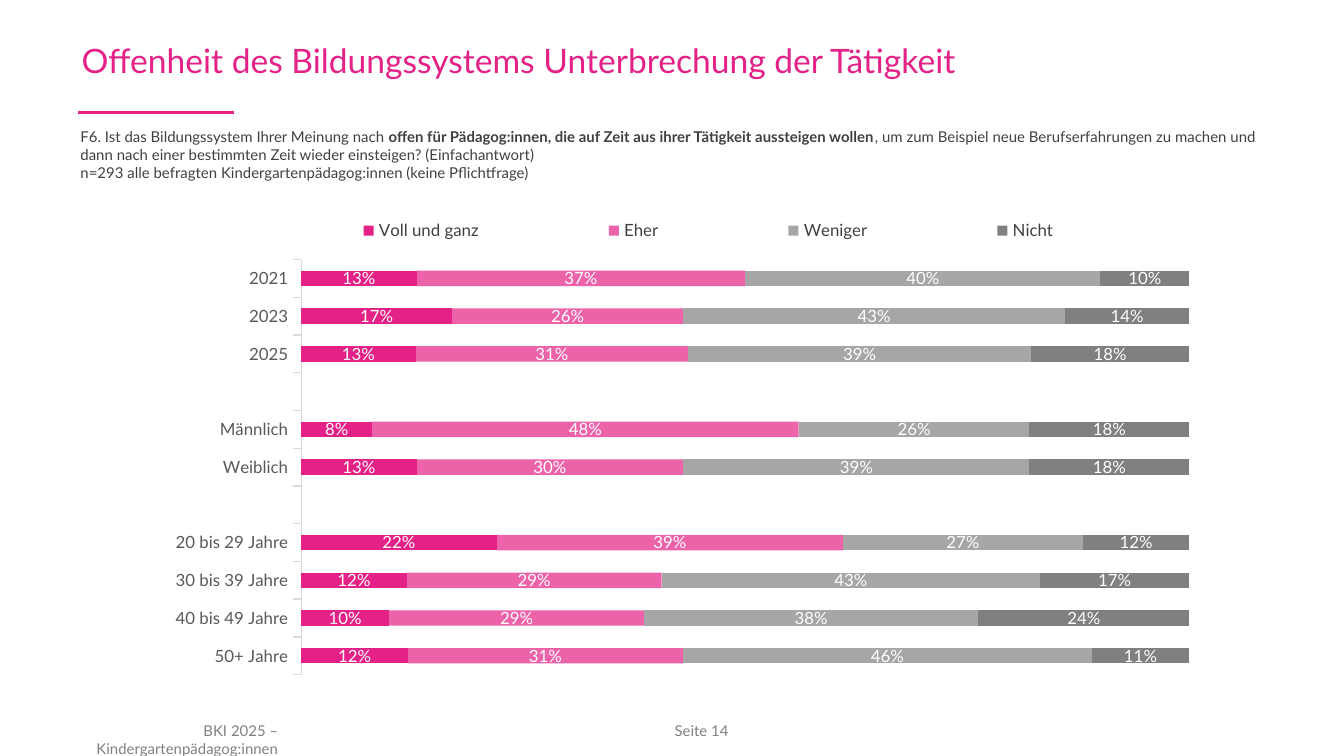
from dataclasses import dataclass
from typing import Optional

from lxml.etree import SubElement
from pptx import Presentation
from pptx.chart.chart import Chart
from pptx.chart.data import CategoryChartData
from pptx.dml.color import RGBColor
from pptx.enum.chart import XL_CHART_TYPE, XL_LEGEND_POSITION, XL_TICK_MARK
from pptx.enum.shapes import MSO_CONNECTOR
from pptx.enum.text import MSO_ANCHOR, PP_ALIGN
from pptx.oxml import parse_xml
from pptx.oxml.ns import nsdecls, qn
from pptx.slide import Slide
from pptx.util import Inches, Pt


@dataclass(frozen=True)
class Theme:
    font: str = "Lato"
    accent: str = "E42187"
    text: str = "404040"
    muted: str = "808080"
    axis_text: str = "595959"
    axis_line: str = "D9D9D9"
    light_gray: str = "A6A6A6"
    white: str = "FFFFFF"
    title_size: float = 18
    small_size: float = 8
    chart_size: float = 9


@dataclass(frozen=True)
class Box:
    left: float
    top: float
    width: float
    height: float

    def lengths(self) -> tuple:
        return tuple(Inches(v) for v in (self.left, self.top, self.width, self.height))


@dataclass(frozen=True)
class Run:
    text: str
    bold: bool = False


@dataclass(frozen=True)
class TextBlock:
    box: Box
    paragraphs: list[list[Run]]
    size: float
    color: str
    alignment: PP_ALIGN = PP_ALIGN.LEFT
    anchor: MSO_ANCHOR = MSO_ANCHOR.TOP


@dataclass(frozen=True)
class Answer:
    name: str
    percents: list[Optional[int]]
    color: str
    opacity: int = 100


THEME = Theme()
CATEGORIES = ["2021", "2023", "2025", "", "Männlich", "Weiblich", "",
              "20 bis 29 Jahre", "30 bis 39 Jahre", "40 bis 49 Jahre", "50+ Jahre"]
ANSWERS = [
    Answer("Voll und ganz", [13, 17, 13, None, 8, 13, None, 22, 12, 10, 12], THEME.accent),
    Answer("Eher", [37, 26, 31, None, 48, 30, None, 39, 29, 29, 31], THEME.accent, 70),
    Answer("Weniger", [40, 43, 39, None, 26, 39, None, 27, 43, 38, 46], THEME.light_gray),
    Answer("Nicht", [10, 14, 18, None, 18, 18, None, 12, 17, 24, 11], THEME.muted),
]
QUESTION = [
    [
        Run("F6. Ist das Bildungssystem Ihrer Meinung nach "),
        Run("offen für Pädagog:innen, die auf Zeit aus ihrer Tätigkeit aussteigen wollen", True),
        Run(", um zum Beispiel neue Berufserfahrungen zu machen und dann nach einer "
            "bestimmten Zeit wieder einsteigen? (Einfachantwort)"),
    ],
    [Run("n=293 alle befragten Kindergartenpädagog:innen (keine Pflichtfrage)")],
]
TEXT_BLOCKS = [
    TextBlock(Box(4.88, 5.32, 0.64, 0.24), [[Run("Seite 14")]],
              THEME.small_size, THEME.muted, PP_ALIGN.RIGHT),
    TextBlock(Box(0.24, 5.32, 1.93, 0.24), [[Run("BKI 2025 – Kindergartenpädagog:innen")]],
              THEME.small_size, THEME.muted, PP_ALIGN.RIGHT),
    TextBlock(Box(0.5, 0.9, 9.15, 0.5), QUESTION, THEME.small_size, THEME.text),
    TextBlock(Box(0.51, 0.1, 7.4, 0.7),
              [[Run("Offenheit des Bildungssystems Unterbrechung der Tätigkeit")]],
              THEME.title_size, THEME.accent, anchor=MSO_ANCHOR.MIDDLE),
]


def apply_format(target, values: dict) -> None:
    for name, value in values.items():
        setattr(target, name, value)


def style_font(font, size: float, color: str, bold: bool = False) -> None:
    apply_format(font, {"name": THEME.font, "size": Pt(size), "bold": bold})
    font.color.rgb = RGBColor.from_string(color)


def add_text(slide: Slide, block: TextBlock) -> None:
    frame = slide.shapes.add_textbox(*block.box.lengths()).text_frame
    apply_format(frame, {"word_wrap": True, "vertical_anchor": block.anchor})
    for index, runs in enumerate(block.paragraphs):
        paragraph = frame.add_paragraph() if index else frame.paragraphs[0]
        paragraph.alignment = block.alignment
        for part in runs:
            run = paragraph.add_run()
            run.text = part.text
            style_font(run.font, block.size, block.color, part.bold)


def add_title_rule(slide: Slide) -> None:
    rule = slide.shapes.add_connector(
        MSO_CONNECTOR.STRAIGHT, Inches(0.58), Inches(0.84), Inches(1.74), Inches(0.84))
    rule.line.color.rgb = RGBColor.from_string(THEME.accent)
    rule.line.width = Pt(1.5)
    SubElement(rule._element.spPr, qn("a:effectLst"))


def place_manually(parent, index: int, area: Box, inner: bool = False) -> None:
    """Give a chart part a fixed place, in percent of the chart."""
    for old in parent.findall(qn("c:layout")):
        parent.remove(old)
    target = '<c:layoutTarget val="inner"/>' if inner else ""
    parent.insert(index, parse_xml(
        f'<c:layout {nsdecls("c")}><c:manualLayout>{target}'
        '<c:xMode val="edge"/><c:yMode val="edge"/>'
        f'<c:x val="{area.left / 100:.3f}"/><c:y val="{area.top / 100:.3f}"/>'
        f'<c:w val="{area.width / 100:.3f}"/><c:h val="{area.height / 100:.3f}"/>'
        '</c:manualLayout></c:layout>'))


def style_series(series, answer: Answer) -> None:
    fill = series.format.fill
    fill.solid()
    fill.fore_color.rgb = RGBColor.from_string(answer.color)
    if answer.opacity < 100:
        color = series._element.spPr.find(".//" + qn("a:srgbClr"))
        SubElement(color, qn("a:alpha"), val=str(answer.opacity * 1000))
    labels = series.data_labels
    apply_format(labels, {"show_value": True, "number_format": "0%",
                          "number_format_is_linked": False})
    style_font(labels.font, THEME.chart_size, THEME.white)


def style_axes(chart: Chart) -> None:
    apply_format(chart.value_axis, {"visible": False, "has_major_gridlines": False,
                                    "minimum_scale": 0, "maximum_scale": 1})
    axis = chart.category_axis
    apply_format(axis, {"reverse_order": True, "has_major_gridlines": False,
                        "major_tick_mark": XL_TICK_MARK.OUTSIDE,
                        "minor_tick_mark": XL_TICK_MARK.NONE})
    style_font(axis.tick_labels.font, THEME.chart_size, THEME.axis_text)
    axis.format.line.color.rgb = RGBColor.from_string(THEME.axis_line)
    axis.format.line.width = Pt(0.75)


def add_answer_chart(slide: Slide) -> None:
    data = CategoryChartData(number_format="0%")
    data.categories = CATEGORIES
    for answer in ANSWERS:
        data.add_series(answer.name,
                        [None if p is None else p / 100 for p in answer.percents])
    chart = slide.shapes.add_chart(
        XL_CHART_TYPE.BAR_STACKED_100, *Box(0.12, 1.52, 8.73, 3.58).lengths(), data).chart
    style_font(chart.font, THEME.chart_size, THEME.white)
    apply_format(chart, {"has_title": False, "has_legend": True})
    plot = chart.plots[0]
    apply_format(plot, {"gap_width": 145, "overlap": 100, "vary_by_categories": False})
    for series, answer in zip(plot.series, ANSWERS):
        style_series(series, answer)
    style_axes(chart)
    legend = chart.legend
    apply_format(legend, {"position": XL_LEGEND_POSITION.TOP, "include_in_layout": False})
    style_font(legend.font, THEME.chart_size, THEME.text)
    place_manually(legend._element, 1, Box(19, 2, 80, 7))
    plot_area = chart._chartSpace.chart.plotArea
    place_manually(plot_area, 0, Box(24.3, 11.5, 75.7, 86.3), inner=True)


def main() -> None:
    presentation = Presentation()
    presentation.slide_width = Inches(10)
    presentation.slide_height = presentation.slide_width * 9 // 16
    slide = presentation.slides.add_slide(presentation.slide_layouts[6])
    add_title_rule(slide)
    for block in TEXT_BLOCKS:
        add_text(slide, block)
    add_answer_chart(slide)
    presentation.save("out.pptx")


if __name__ == "__main__":
    main()
